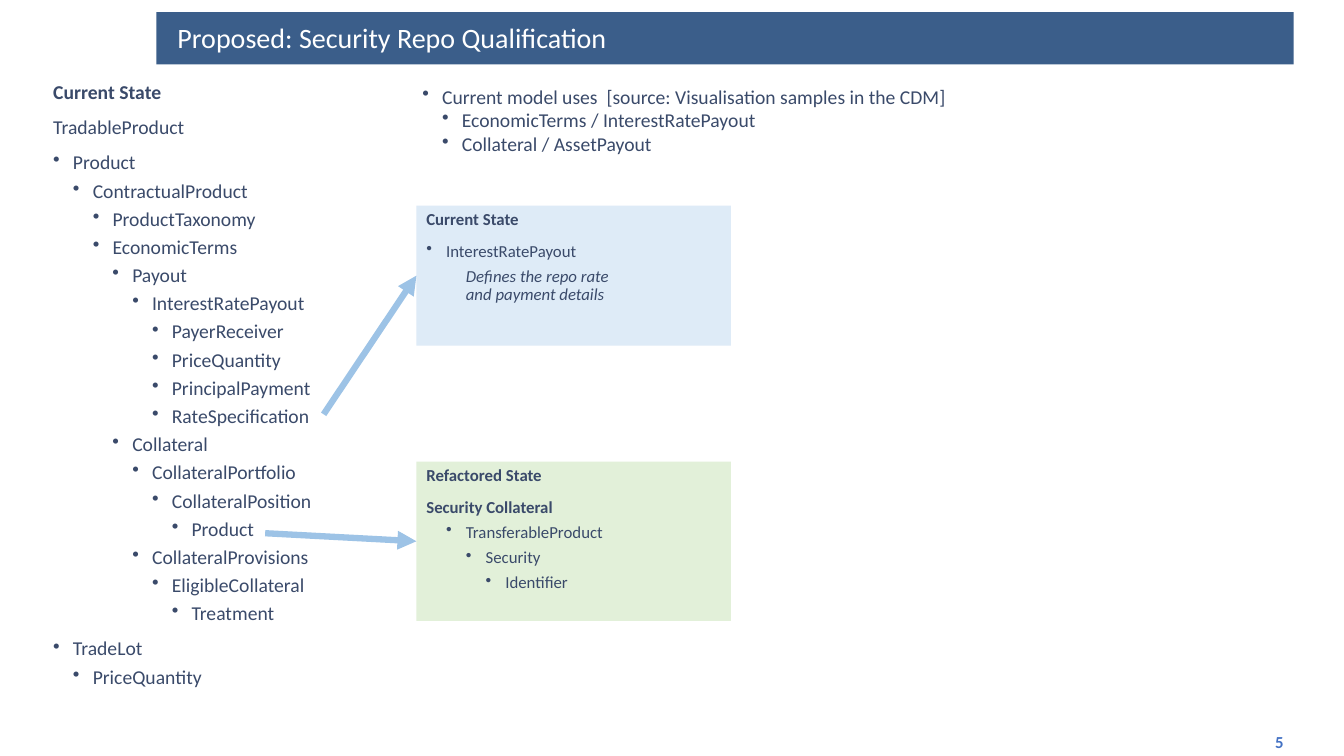
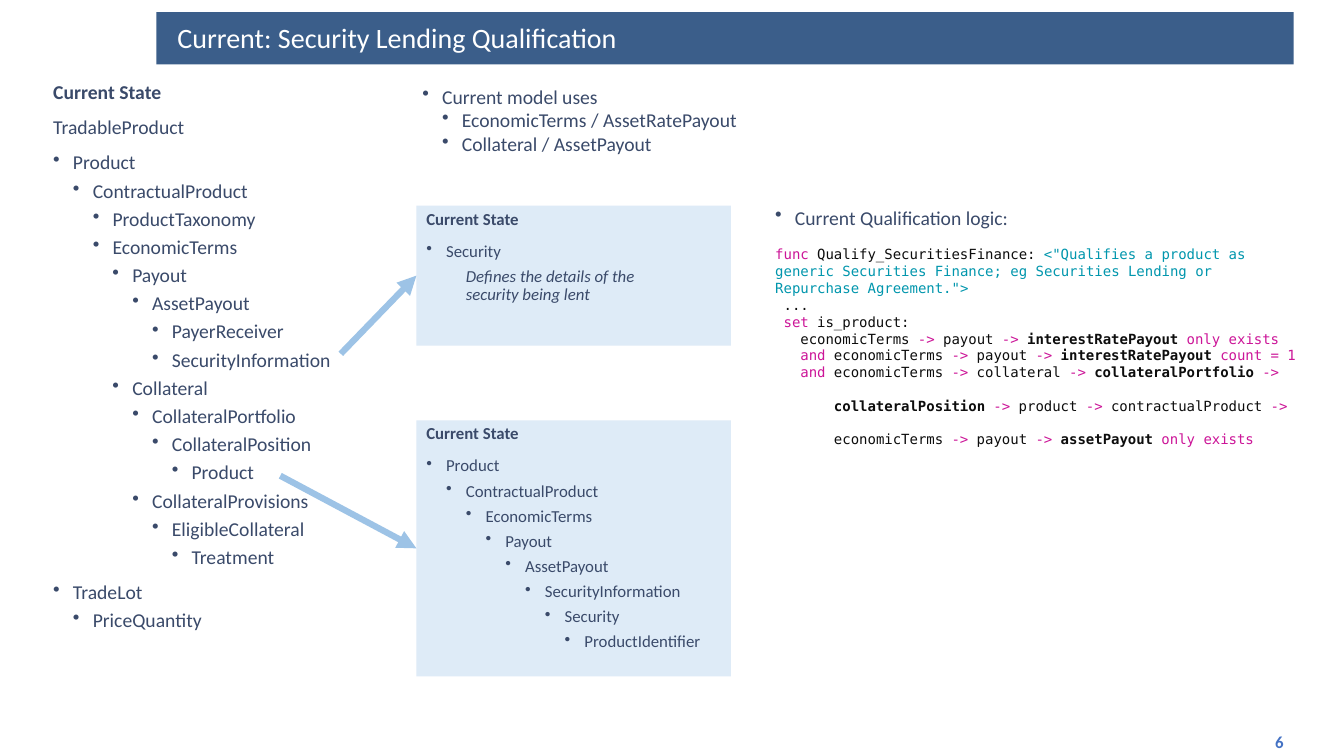
from collections import namedtuple
from itertools import groupby

from lxml.etree import SubElement
from pptx import Presentation
from pptx.dml.color import RGBColor
from pptx.enum.shapes import MSO_CONNECTOR, MSO_SHAPE
from pptx.enum.text import MSO_ANCHOR, PP_ALIGN
from pptx.oxml.ns import qn
from pptx.util import Inches, Pt

WHITE = RGBColor(0xFF, 0xFF, 0xFF)
BAND_BLUE = RGBColor(0x3B, 0x5E, 0x8A)
INK = RGBColor(0x3A, 0x4A, 0x6A)
NUMBER_BLUE = RGBColor(0x44, 0x72, 0xC4)
ARROW_BLUE = RGBColor(0x9D, 0xC3, 0xE6)
PANEL_BLUE = RGBColor(0xDE, 0xEB, 0xF7)
PANEL_GREEN = RGBColor(0xE2, 0xF0, 0xD9)
CODE_INK = RGBColor(0x0D, 0x0D, 0x0D)
CODE_PINK = RGBColor(0xCC, 0x15, 0x98)
CODE_TEAL = RGBColor(0x00, 0x96, 0xAD)

BODY_FONT = "Calibri"
CODE_FONT = "DejaVu Sans Mono"
INDENT = 0.196

Box = namedtuple("Box", "left top width height")
SLIDE = Box(0, 0, 13.33, 7.5)
BAND = Box(1.55, 0.12, 11.28, 0.52)
TREE = Box(0.43, 0.77, 3.37, 6.37)
SUMMARY = Box(4.09, 0.79, 6.42, 0.81)
PANEL_COLUMN = Box(4.13, 2.04, 3.12, 4.67)
LOGIC = Box(7.59, 1.99, 5.42, 2.19)

KEYWORDS = {"func", "set", "and", "only", "exists", "count", "=", "1", "->"}
BOLD_NAMES = {"interestRatePayout", "collateralPortfolio", "collateralPosition", "assetPayout"}
CODE_LINES = [
    'func Qualify_SecuritiesFinance: <"Qualifies a product as generic Securities Finance; '
    'eg Securities Lending or Repurchase Agreement.">',
    " ...",
    " set is_product:",
    "   economicTerms -> payout -> interestRatePayout only exists",
    "   and economicTerms -> payout -> interestRatePayout count = 1",
    "   and economicTerms -> collateral -> collateralPortfolio ->",
    "       collateralPosition -> product -> contractualProduct ->",
    "       economicTerms -> payout -> assetPayout only exists",
]
GAP_BEFORE_LINES = {0, 6, 7}


def siblings(depth, *names):
    return [dict(text=name, depth=depth) for name in names]


def chain(depth, *names):
    return [dict(text=name, depth=depth + step) for step, name in enumerate(names)]


def heading(text):
    return [dict(text=text, bold=True)]


def description(text):
    return [dict(text=text, depth=1, bullet=False, italic=True)]


def product_tree(payout, *fields):
    return (
        heading("Current State")
        + siblings(-1, "TradableProduct")
        + chain(0, "Product", "ContractualProduct", "ProductTaxonomy")
        + chain(2, "EconomicTerms", "Payout", payout)
        + siblings(5, *fields)
        + chain(3, "Collateral", "CollateralPortfolio", "CollateralPosition", "Product")
        + chain(4, "CollateralProvisions", "EligibleCollateral", "Treatment")
        + chain(0, "TradeLot", "PriceQuantity")
    )


def place(box):
    return [Inches(length) for length in box]


def add_span(para, text, size=14, color=INK, font=BODY_FONT, bold=False, italic=False):
    for position, piece in enumerate(text.split("\n")):
        if position:
            para.add_line_break()
        span = para.add_run()
        span.text = piece
        span.font.name = font
        span.font.size = Pt(size)
        span.font.color.rgb = color
        span.font.bold = bold
        span.font.italic = italic


def add_para(frame, first=False):
    return frame.paragraphs[0] if first else frame.add_paragraph()


def add_item(frame, text, depth=-1, bullet=True, first=False, spacing=0.9, gaps=(10, 5), **style):
    para = add_para(frame, first)
    para.alignment = PP_ALIGN.LEFT
    para.line_spacing = spacing
    para.space_before = Pt(0 if first else gaps[depth > 0])
    if depth >= 0:
        para.level = min(depth, 4)
        properties = para._p.get_or_add_pPr()
        properties.set("marL", str(Inches(INDENT * (depth + 1))))
        properties.set("indent", str(-Inches(INDENT) if bullet else 0))
        if bullet:
            SubElement(properties, qn("a:buChar")).set("char", "•")
    add_span(para, text, **style)


def add_items(frame, items, **style):
    frame.word_wrap = True
    for position, item in enumerate(items):
        add_item(frame, first=position == 0, **style, **item)


def add_text_box(page, box, items, **style):
    frame = page.shapes.add_textbox(*place(box)).text_frame
    add_items(frame, items, **style)
    return frame


def add_rectangle(page, box, color):
    shape = page.shapes.add_shape(MSO_SHAPE.RECTANGLE, *place(box))
    shape.shadow.inherit = False
    shape.fill.solid()
    shape.fill.fore_color.rgb = color
    shape.line.fill.background()
    return shape


def add_panel(page, column, top, height, color, items, arrow_start):
    panel = add_rectangle(page, Box(column.left, top, column.width, height), color)
    panel.text_frame.vertical_anchor = MSO_ANCHOR.TOP
    add_items(panel.text_frame, items, size=12)
    start_x, start_y = arrow_start
    arrow = page.shapes.add_connector(
        MSO_CONNECTOR.STRAIGHT, Inches(start_x), Inches(start_y), panel.left, panel.top
    )
    arrow.end_connect(panel, 1)
    arrow.line.color.rgb = ARROW_BLUE
    arrow.line.width = Pt(4.5)
    SubElement(arrow.line._get_or_add_ln(), qn("a:tailEnd")).set("type", "triangle")
    SubElement(arrow._element.spPr, qn("a:effectLst"))


def add_title(page, band, text):
    title = page.shapes.title
    title.left, title.top, title.width, title.height = place(
        Box(band.left + 0.11, band.top + 0.06, band.width - 0.45, band.height - 0.1)
    )
    title.text_frame.vertical_anchor = MSO_ANCHOR.MIDDLE
    title.text_frame.word_wrap = True
    para = title.text_frame.paragraphs[0]
    para.alignment = PP_ALIGN.LEFT
    para.line_spacing = 0.9
    add_span(para, text, size=20, color=WHITE)


def add_page_number(page, slide, number):
    right = BAND.left + BAND.width
    box = Box(right - 3, slide.height - 0.29, 3, 0.29)
    frame = add_text_box(page, box, heading(str(number)), size=12, color=NUMBER_BLUE, spacing=1)
    frame.vertical_anchor = MSO_ANCHOR.MIDDLE
    frame.paragraphs[0].alignment = PP_ALIGN.RIGHT


def code_style(word):
    return CODE_PINK if word in KEYWORDS else CODE_INK, word in BOLD_NAMES


def add_code_line(frame, line, gap):
    para = add_para(frame)
    para.space_before = Pt(gap)
    statement, mark, remark = line.partition("<")
    separator = ""
    for (color, bold), words in groupby(statement.split(" "), code_style):
        text = separator + " ".join(words)
        add_span(para, text, size=10, font=CODE_FONT, color=color, bold=bold)
        separator = " "
    if mark:
        add_span(para, mark + remark, size=10, font=CODE_FONT, color=CODE_TEAL)


def add_logic(page, box):
    frame = add_text_box(page, box, siblings(0, "Current Qualification logic:"), spacing=1)
    for position, line in enumerate(CODE_LINES):
        add_code_line(frame, line, 12 if position in GAP_BEFORE_LINES else 0)


def add_model_page(deck, number, title, tree, summary, panels):
    page = deck.slides.add_slide(deck.slide_layouts[5])
    add_title(page, BAND, title)
    add_page_number(page, SLIDE, number)
    add_text_box(page, TREE, tree)
    add_text_box(page, SUMMARY, summary, spacing=1, gaps=(0, 0))
    for panel in panels:
        add_panel(page, PANEL_COLUMN, **panel)
    return page


def move_band_to_master(deck, page):
    band = add_rectangle(page, BAND, BAND_BLUE)
    deck.slide_master.shapes.element.insert(2, band._element)


def main():
    deck = Presentation()
    deck.slide_width, deck.slide_height = Inches(SLIDE.width), Inches(SLIDE.height)

    repo_page = add_model_page(
        deck, 5, "Proposed: Security Repo Qualification",
        product_tree("InterestRatePayout", "PayerReceiver", "PriceQuantity",
                     "PrincipalPayment", "RateSpecification"),
        siblings(0, "Current model uses  [source: Visualisation samples in the CDM]")
        + siblings(1, "EconomicTerms / InterestRatePayout", "Collateral / AssetPayout"),
        [
            dict(top=PANEL_COLUMN.top, height=1.39, color=PANEL_BLUE, arrow_start=(3.21, 4.11),
                 items=heading("Current State") + siblings(0, "InterestRatePayout")
                 + description("Defines the repo rate\nand payment details")),
            dict(top=4.58, height=1.58, color=PANEL_GREEN, arrow_start=(2.63, 5.29),
                 items=heading("Refactored State") + heading("Security Collateral")
                 + chain(1, "TransferableProduct", "Security", "Identifier")),
        ],
    )
    move_band_to_master(deck, repo_page)

    lending_page = add_model_page(
        deck, 6, "Current: Security Lending Qualification",
        product_tree("AssetPayout", "PayerReceiver", "SecurityInformation"),
        siblings(0, "Current model uses")
        + siblings(1, "EconomicTerms / AssetRatePayout", "Collateral / AssetPayout"),
        [
            dict(top=PANEL_COLUMN.top, height=1.39, color=PANEL_BLUE, arrow_start=(3.38, 3.51),
                 items=heading("Current State") + siblings(0, "Security")
                 + description("Defines the details of the\nsecurity being lent")),
            dict(top=4.17, height=2.54, color=PANEL_BLUE, arrow_start=(2.78, 4.72),
                 items=heading("Current State")
                 + chain(0, "Product", "ContractualProduct", "EconomicTerms", "Payout",
                         "AssetPayout", "SecurityInformation", "Security", "ProductIdentifier")),
        ],
    )
    add_logic(lending_page, LOGIC)
    deck.save("out.pptx")


if __name__ == "__main__":
    main()
